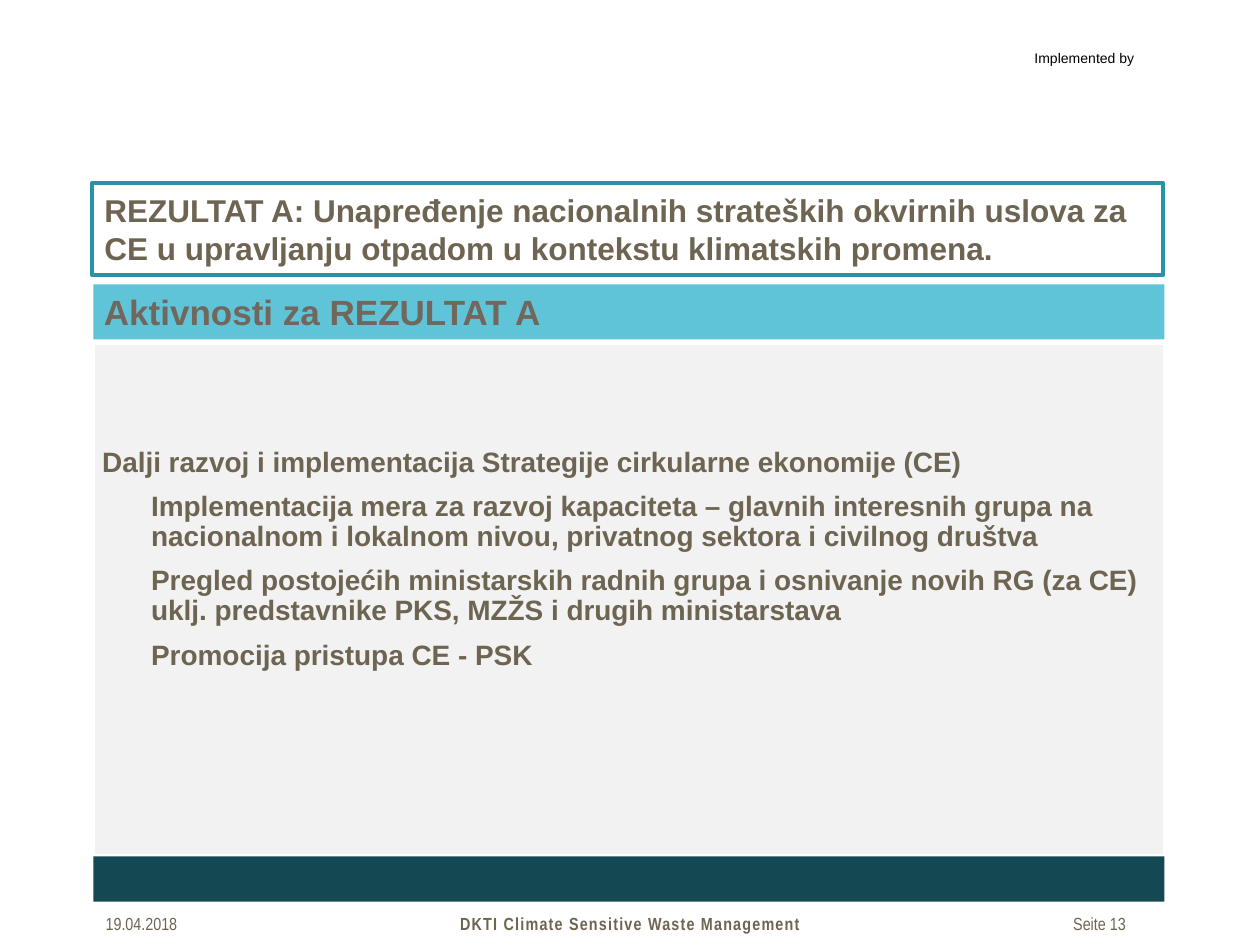
from pptx import Presentation
from pptx.dml.color import RGBColor
from pptx.enum.shapes import MSO_SHAPE
from pptx.enum.text import MSO_ANCHOR, PP_ALIGN
from pptx.util import Pt

RECTANGLE = MSO_SHAPE.RECTANGLE
TOP, MIDDLE = MSO_ANCHOR.TOP, MSO_ANCHOR.MIDDLE
LEFT, CENTER = PP_ALIGN.LEFT, PP_ALIGN.CENTER

COLORS = {
    "text": "6E6452",
    "heading": "71675C",
    "black": "000000",
    "white": "FFFFFF",
    "border": "2892A8",
    "band": "60C4D9",
    "panel": "F2F2F2",
    "footer": "144954",
}
ACTIVITIES = [
    "Implementacija mera za razvoj kapaciteta – glavnih interesnih grupa na "
    "nacionalnom i lokalnom nivou, privatnog sektora i civilnog društva",
    "Pregled postojećih ministarskih radnih grupa i osnivanje novih RG (za CE) "
    "uklj. predstavnike PKS, MZŽS i drugih ministarstava",
    "Promocija pristupa CE - PSK",
]


class SlideBuilder:
    """Holds the text style and the slide being built."""

    def __init__(self, slide):
        self.slide = slide
        self.font = "Arial"
        self.narrow_font = "Arial Narrow"

    def format(self, paragraph, size, color, bold=True, font=None, align=LEFT, tracking=0):
        paragraph.alignment = align
        for run in paragraph.runs:
            run.font.name = font or self.font
            run.font.size = Pt(size)
            run.font.bold = bold
            run.font.color.rgb = RGBColor.from_string(COLORS[color])
            if tracking:
                run.font._element.set("spc", str(tracking))

    def box(self, left, top, width, height, fill=None, line=None, line_width=2):
        shape = self.slide.shapes.add_shape(
            RECTANGLE, Pt(left), Pt(top), Pt(width), Pt(height))
        shape.shadow.inherit = False
        if fill:
            shape.fill.solid()
            shape.fill.fore_color.rgb = RGBColor.from_string(COLORS[fill])
        else:
            shape.fill.background()
        if line:
            shape.line.color.rgb = RGBColor.from_string(COLORS[line])
            shape.line.width = Pt(line_width)
        else:
            shape.line.fill.background()
        return shape

    def heading(self, shape, text, size, color, inset):
        frame = shape.text_frame
        frame.text = text
        frame.vertical_anchor = MIDDLE
        frame.margin_left = frame.margin_right = Pt(inset)
        self.format(frame.paragraphs[0], size, color)

    def activities(self, shape, lead, items):
        frame = shape.text_frame
        frame.vertical_anchor = TOP
        frame.margin_left = frame.margin_right = Pt(5)
        frame.margin_top = Pt(60)
        for index, text in enumerate([lead, *items]):
            paragraph = frame.add_paragraph() if index else frame.paragraphs[0]
            paragraph.text = text
            paragraph.line_spacing = 0.9
            paragraph.space_after = Pt(8)
            if index:
                paragraph._p.get_or_add_pPr().set("marL", str(Pt(28)))
            self.format(paragraph, 16, "text")

    def label(self, text, left, top, width, height, size, color="text", **style):
        shape = self.slide.shapes.add_textbox(Pt(left), Pt(top), Pt(width), Pt(height))
        frame = shape.text_frame
        frame.word_wrap = True
        frame.text = text
        self.format(frame.paragraphs[0], size, color, **style)

    def footer(self, text, left, width, **style):
        self.label(text, left, 518.4, width, 19.4, 10, font=self.narrow_font, **style)


def main():
    presentation = Presentation()
    presentation.slide_width, presentation.slide_height = Pt(720), Pt(540)
    builder = SlideBuilder(presentation.slides.add_slide(presentation.slide_layouts[6]))

    builder.label("Implemented by", 584, 24.5, 84, 17.3, 8, "black", bold=False)
    builder.footer("19.04.2018", 53.3, 102, bold=False)
    builder.footer("DKTI Climate Sensitive Waste Management", 225.4, 269.3,
                   align=CENTER, tracking=70)
    builder.footer("Seite 13", 606.2, 72.7, bold=False)

    band = builder.box(53.4, 162.5, 612, 31.5, "band")
    builder.heading(band, "Aktivnosti za REZULTAT A", 20, "heading", 6)
    panel = builder.box(53.4, 196, 612, 293, "panel", "white")
    builder.activities(
        panel, "Dalji razvoj i implementacija Strategije cirkularne ekonomije (CE)", ACTIVITIES)
    builder.box(53.4, 489.3, 612, 26, "footer")
    title = builder.box(52.6, 104.6, 612, 52.6, line="border", line_width=2.25)
    builder.heading(
        title,
        "REZULTAT A: Unapređenje nacionalnih strateških okvirnih uslova za "
        "CE u upravljanju otpadom u kontekstu klimatskih promena.",
        18, "text", 7.2)

    presentation.save("out.pptx")


if __name__ == "__main__":
    main()
